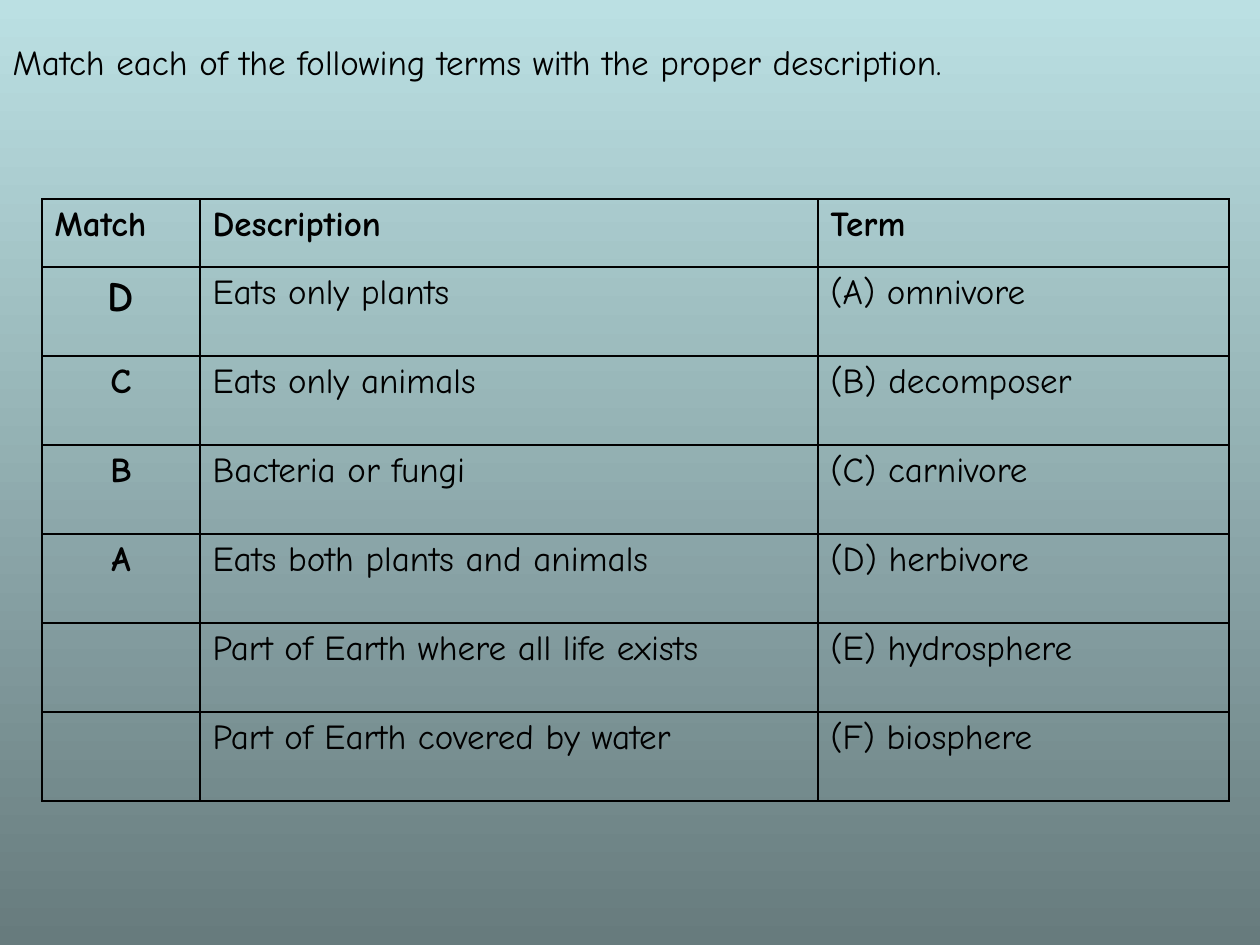
from lxml import etree
from pptx import Presentation
from pptx import util as u
from pptx.dml.color import RGBColor
from pptx.enum import text
from pptx.oxml import ns

TITLE = "Match each of the following terms with the proper description."
HEADER = ("Match", "Description", "Term")
ROWS = [
    ("D", "Eats only plants", "(A) omnivore"),
    ("C", "Eats only animals", "(B) decomposer"),
    ("B", "Bacteria or fungi", "(C) carnivore"),
    ("A", "Eats both plants and animals", "(D) herbivore"),
    ("", "Part of Earth where all life exists", "(E) hydrosphere"),
    ("", "Part of Earth covered by water", "(F) biosphere"),
]

COLORS = {"ink": "000000", "sky": "BBE0E3", "slate": "677B7D"}
FONT = "Comic Neue"
SIZE, BIG_SIZE = 20, 24
COL_WIDTHS = (158, 618, 411)
HEADER_HEIGHT, ROW_HEIGHT = 68, 89
TABLE_LEFT, TABLE_TOP = 42, 199


def px(n):
    return u.Emu(round(n * 914400 / 126))


def write(tf, words, size=SIZE, bold=False, align=text.PP_ALIGN.LEFT):
    p = tf.paragraphs[0]
    p.alignment = align
    r = p.add_run()
    r.text = words
    for name, value in {"name": FONT, "size": u.Pt(size), "bold": bold}.items():
        setattr(r.font, name, value)
    r.font.color.rgb = RGBColor.from_string(COLORS["ink"])


def add_borders(cell):
    """Draw a 1 pt line on all four sides of a cell."""
    props = cell._tc.get_or_add_tcPr()
    for i, side in enumerate("LRTB"):
        line = etree.Element(ns.qn(f"a:ln{side}"), w=str(u.Pt(1)))
        fill = etree.SubElement(line, ns.qn("a:solidFill"))
        etree.SubElement(fill, ns.qn("a:srgbClr"), val=COLORS["ink"])
        props.insert(i, line)


def add_background(s):
    fill = s.background.fill
    fill.gradient()
    fill.gradient_angle = 270
    for stop, key, position in zip(fill.gradient_stops, ("sky", "slate"), (0, 1)):
        stop.color.rgb = RGBColor.from_string(COLORS[key])
        stop.position = position


def add_title(s):
    title = s.shapes.title
    title.left, title.top, title.width, title.height = map(px, (0, 32, 1260, 130))
    tf = title.text_frame
    frame = {
        "word_wrap": True,
        "auto_size": text.MSO_AUTO_SIZE.NONE,
        "vertical_anchor": text.MSO_ANCHOR.TOP,
        "margin_top": px(9),
    }
    for name, value in frame.items():
        setattr(tf, name, value)
    write(tf, TITLE)


def add_match_table(s):
    rows = [HEADER, *ROWS]
    heights = [HEADER_HEIGHT] + [ROW_HEIGHT] * len(ROWS)
    table = s.shapes.add_table(
        len(rows), len(HEADER), px(TABLE_LEFT), px(TABLE_TOP),
        px(sum(COL_WIDTHS)), px(sum(heights))).table
    table.first_row = table.horz_banding = False
    for col, width in zip(table.columns, COL_WIDTHS):
        col.width = px(width)
    for i, (row, height) in enumerate(zip(rows, heights)):
        table.rows[i].height = px(height)
        for j, words in enumerate(row):
            cell = table.cell(i, j)
            cell.fill.background()
            add_borders(cell)
            if not words:
                continue
            is_answer = i > 0 and j == 0
            write(cell.text_frame, words,
                  size=BIG_SIZE if is_answer and i == 1 else SIZE,
                  bold=i == 0 or is_answer,
                  align=text.PP_ALIGN.CENTER if is_answer else text.PP_ALIGN.LEFT)


def main():
    prs = Presentation()
    prs.slide_width, prs.slide_height = px(1260), px(945)
    s = prs.slides.add_slide(prs.slide_layouts.get_by_name("Title Only"))
    add_background(s)
    add_title(s)
    add_match_table(s)
    prs.save("out.pptx")


if __name__ == "__main__":
    main()
